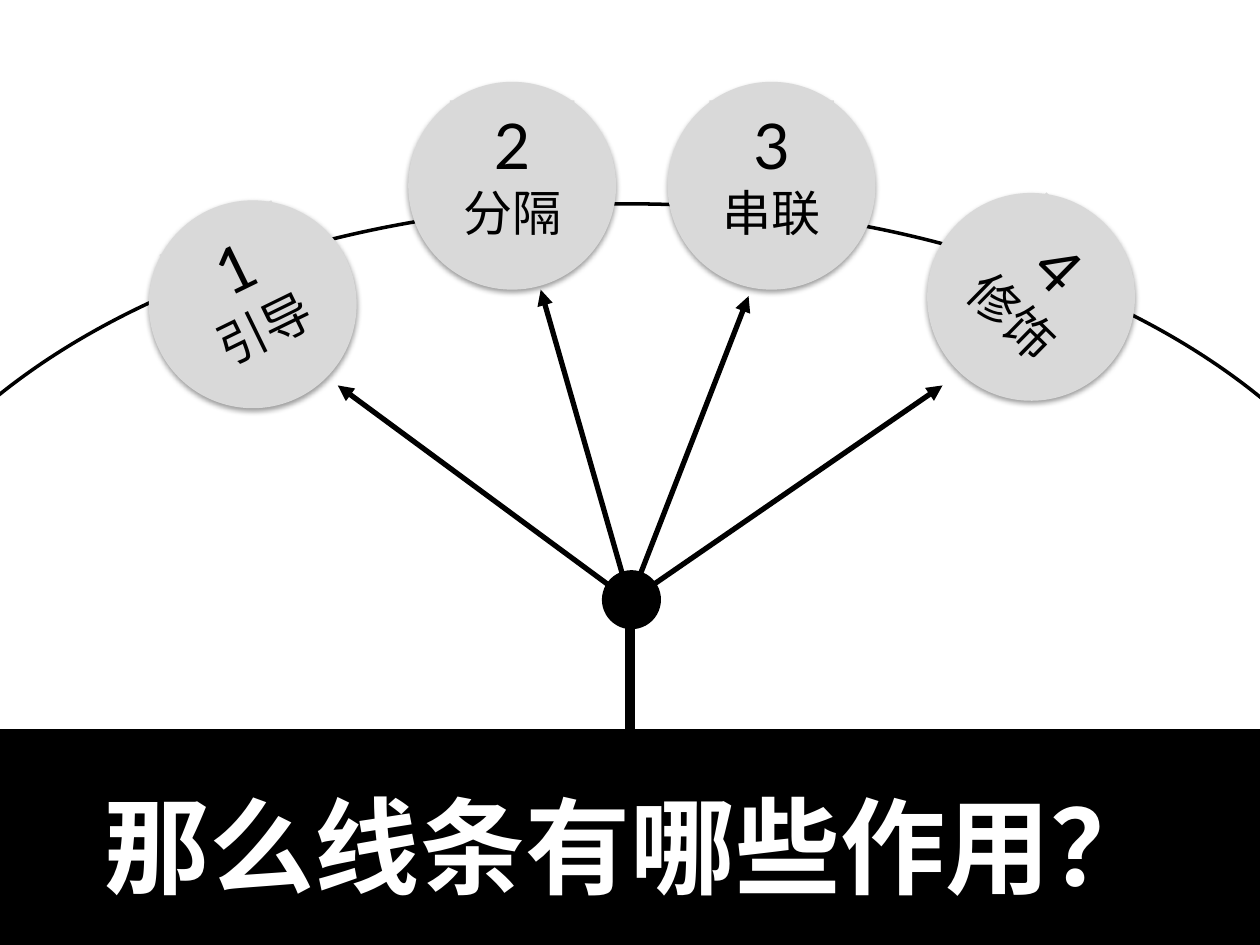
from math import cos, radians, sin

from lxml import etree
from pptx import Presentation
from pptx.dml.color import RGBColor
from pptx.enum.shapes import MSO_CONNECTOR, MSO_SHAPE
from pptx.enum.text import MSO_ANCHOR, MSO_AUTO_SIZE, PP_ALIGN
from pptx.oxml import parse_xml
from pptx.oxml.ns import nsdecls, qn
from pptx.util import Cm, Pt

BLACK = RGBColor(0x00, 0x00, 0x00)
WHITE = RGBColor(0xFF, 0xFF, 0xFF)
GREY = RGBColor(0xD9, 0xD9, 0xD9)
OVAL, RECT = MSO_SHAPE.OVAL, MSO_SHAPE.RECTANGLE
LINE = MSO_CONNECTOR.STRAIGHT
CENTER, MIDDLE = PP_ALIGN.CENTER, MSO_ANCHOR.MIDDLE
GROW = MSO_AUTO_SIZE.SHAPE_TO_FIT_TEXT

DIGIT = {"size": Pt(36), "name": "Lato"}
WORD = {"size": Pt(28), "name": "Noto Sans CJK SC"}
TITLE = {"size": Pt(60), "name": "Noto Sans CJK SC", "bold": True}
LABEL = {"word_wrap": False, "auto_size": GROW}
PANEL = {"word_wrap": True, "vertical_anchor": MIDDLE}

DISC = 4.19
SHADE = (
    f'<a:effectLst {nsdecls("a")}>'
    '<a:outerShdw blurRad="39370" dist="20320" dir="5400000" rotWithShape="0">'
    '<a:srgbClr val="000000"><a:alpha val="38000"/></a:srgbClr>'
    "</a:outerShdw></a:effectLst>"
)


def apply(item, style):
    for key, value in style.items():
        setattr(item, key, value)


def put(parts, kind, box, fill=None, width=None):
    shape = parts.add_shape(kind, *(Cm(v) for v in box))
    shape.shadow.inherit = False
    if fill is None:
        shape.fill.background()
    else:
        shape.fill.solid()
        shape.fill.fore_color.rgb = fill
    if width is None:
        shape.line.fill.background()
    else:
        shape.line.color.rgb = BLACK
        shape.line.width = Pt(width)
    return shape


def write(para, text, style, color):
    para.alignment = CENTER
    run = para.add_run()
    run.text = text
    apply(run.font, style)
    run.font.color.rgb = color
    east = etree.SubElement(run.font._element, qn("a:ea"))
    east.set("typeface", style["name"])


def join(parts, start, end, width, arrow=False):
    ends = [Cm(v) for v in (*start, *end)]
    link = parts.add_connector(LINE, *ends)
    link.line.color.rgb = BLACK
    link.line.width = Pt(width)
    if arrow:
        tip = etree.SubElement(link.line._get_or_add_ln(), qn("a:tailEnd"))
        tip.set("type", "triangle")
    etree.SubElement(link._element.spPr, qn("a:effectLst"))


def add_disc(slide, left, top, turn, digit, word):
    parts = slide.shapes.add_group_shape().shapes
    disc = put(parts, OVAL, (left, top, DISC, DISC), GREY)
    props = disc._element.spPr
    props.replace(props.find(qn("a:effectLst")), parse_xml(SHADE))
    wide, high, lift = 2.51, 3.0, 0.22
    angle = radians(turn)
    mid_x = left + DISC / 2 + lift * sin(angle)
    mid_y = top + DISC / 2 - lift * cos(angle)
    label = put(parts, RECT, (mid_x - wide / 2, mid_y - high / 2, wide, high), GREY)
    disc.rotation = label.rotation = turn
    frame = label.text_frame
    apply(frame, LABEL)
    frame.vertical_anchor = MSO_ANCHOR.TOP
    write(frame.paragraphs[0], digit, DIGIT, BLACK)
    write(frame.add_paragraph(), word, WORD, BLACK)


def add_hub(slide, x, y, foot, tips):
    parts = slide.shapes.add_group_shape().shapes
    size = 1.12
    join(parts, (x, foot), (x, y), 6)
    put(parts, OVAL, (x - 0.53, y - 0.58, size, size), BLACK, 2)
    for tip in tips:
        join(slide.shapes, (x, y), tip, 3, True)


def add_banner(slide, box, text):
    panel = put(slide.shapes, RECT, box, BLACK, 2)
    frame = panel.text_frame
    apply(frame, PANEL)
    write(frame.paragraphs[0], text, TITLE, WHITE)


def main():
    deck = Presentation()
    deck.slide_width, deck.slide_height = Cm(25.4), Cm(19.05)
    slide = deck.slides.add_slide(deck.slide_layouts[6])
    put(slide.shapes, OVAL, (-3.3, 4.11, 31.93, 19.61), width=2)
    discs = [
        (4.04, 334, "引导"),
        (1.65, 0, "分隔"),
        (1.65, 0, "串联"),
        (3.89, 44.5, "修饰"),
    ]
    for i, (top, turn, word) in enumerate(discs):
        add_disc(slide, 3 + 5.23 * i, top, turn, str(i + 1), word)
    tips = [(6.81, 7.77), (10.9, 5.84), (15.09, 5.97), (19, 7.77)]
    add_hub(slide, 12.7, 12.11, 22.94, tips)
    add_banner(slide, (0, 14.73, 25.4, 4.6), "那么线条有哪些作用？")
    deck.save("out.pptx")


if __name__ == "__main__":
    main()
